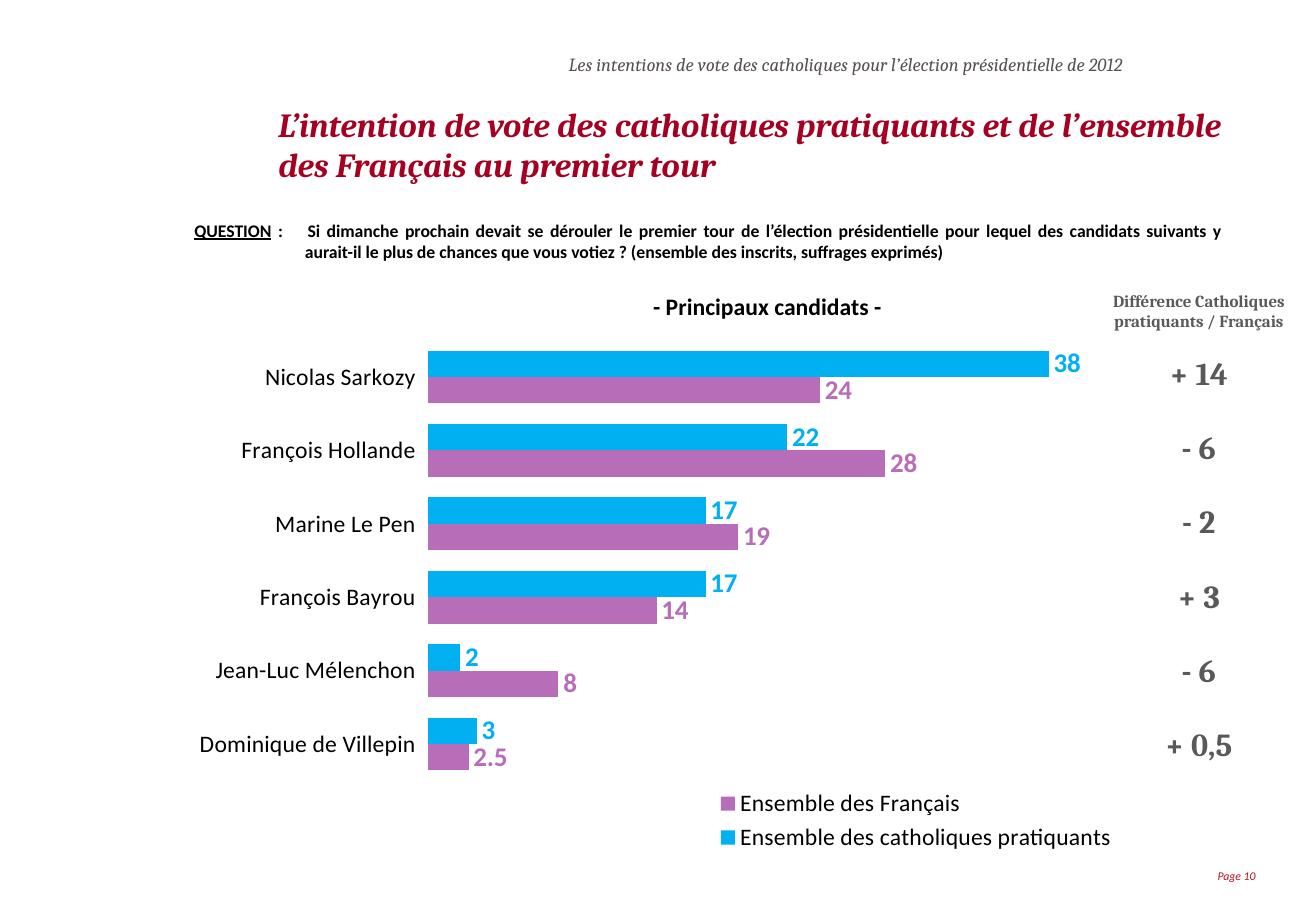
from lxml import etree
from pptx import Presentation
from pptx import util as u
from pptx.chart.data import CategoryChartData
from pptx.dml.color import RGBColor
from pptx.enum import chart as ch
from pptx.enum import text as t
from pptx.oxml.ns import qn

COLORS = {
    "title": "A50021", "page": "B5121B", "header": "585056", "gap": "595959",
    "text": "000000", "white": "FFFFFF", "catholics": "00B0F0", "french": "B86DB8",
}
CANDIDATES = ["Nicolas Sarkozy", "François Hollande", "Marine Le Pen",
              "François Bayrou", "Jean-Luc Mélenchon", "Dominique de Villepin"]
SERIES = [
    ("Ensemble des catholiques pratiquants", (38, 22, 17, 17, 2, 3), "catholics"),
    ("Ensemble des Français", (24, 28, 19, 14, 8, 2.5), "french"),
]
GAPS = ["+ 14", "- 6", "- 2", "+ 3", "- 6", "+ 0,5"]


def inches(box):
    return [u.Inches(value) for value in box]


def set_font(font, size, color, name="Calibri", bold=False, italic=False):
    font.size, font.name = u.Pt(size), name
    font.bold, font.italic = bold, italic
    font.color.rgb = RGBColor.from_string(COLORS[color])


def add_text(page, box, text, size, color, name="Calibri", bold=False, italic=False,
             insets=(0, 0, 0, 0), anchor=t.MSO_ANCHOR.MIDDLE, align=t.PP_ALIGN.LEFT):
    frame = page.shapes.add_textbox(*inches(box)).text_frame
    frame.word_wrap = True
    frame.vertical_anchor = anchor
    (frame.margin_left, frame.margin_top,
     frame.margin_right, frame.margin_bottom) = inches(insets)
    para = frame.paragraphs[0]
    para.text = text
    para.alignment = align
    set_font(para.font, size, color, name, bold, italic)
    return para


def add_question(page, box):
    para = add_text(page, box, "", 10.5, "text", bold=True,
                    insets=(0.09, 0.18, 0.36, 0.18),
                    anchor=t.MSO_ANCHOR.TOP, align=t.PP_ALIGN.JUSTIFY)
    # Hanging indent
    indent = u.Inches(0.91)
    props = para._p.get_or_add_pPr()
    props.set("marL", str(indent))
    props.set("indent", str(-indent))
    label = para.add_run()
    label.text = "QUESTION"
    label.font.underline = True
    para.add_run().text = (
        " :\tSi dimanche prochain devait se dérouler le premier tour de l’élection "
        "présidentielle pour lequel des candidats suivants y aurait-il le plus de chances "
        "que vous votiez ? (ensemble des inscrits, suffrages exprimés)")


def add_gap_table(page, box):
    rows = ["Différence Catholiques pratiquants / Français"] + GAPS
    frame = page.shapes.add_table(len(rows), 1, *inches(box))
    table = frame.table
    table.first_row = table.horz_banding = False
    for index, text in enumerate(rows):
        table.rows[index].height = u.Inches(0.61 if index else 0.42)
        cell = table.cell(index, 0)
        cell.fill.solid()
        cell.fill.fore_color.rgb = RGBColor.from_string(COLORS["white"])
        cell.vertical_anchor = t.MSO_ANCHOR.MIDDLE
        cell.text = text
        para = cell.text_frame.paragraphs[0]
        para.alignment = t.PP_ALIGN.CENTER
        set_font(para.font, 19 if index else 10, "gap", "Cambria", bold=True)


def place(parent, index, box, inner=False):
    """Give a chart part a manual layout, as fractions of the chart."""
    for old in parent.findall(qn("c:layout")):
        parent.remove(old)
    layout = etree.Element(qn("c:layout"))
    manual = etree.SubElement(layout, qn("c:manualLayout"))
    settings = [("layoutTarget", "inner")] if inner else []
    settings += [("xMode", "edge"), ("yMode", "edge")]
    settings += zip("xywh", map(str, box))
    for tag, value in settings:
        etree.SubElement(manual, qn("c:" + tag)).set("val", value)
    parent.insert(index, layout)


def add_vote_chart(page, box):
    data = CategoryChartData()
    data.categories = CANDIDATES
    for name, values, _ in SERIES:
        data.add_series(name, values)
    chart = page.shapes.add_chart(
        ch.XL_CHART_TYPE.BAR_CLUSTERED, *inches(box), data).chart
    chart.has_title = False
    set_font(chart.font, 14, "text")

    # Axes
    names, votes = chart.category_axis, chart.value_axis
    names.reverse_order = True
    names.format.line.fill.background()
    votes.minimum_scale, votes.maximum_scale = 0, 50
    votes.has_major_gridlines = False
    votes.visible = False

    # Bars and values
    plot = chart.plots[0]
    plot.gap_width, plot.overlap = 78, 0
    plot.vary_by_categories = False
    for series, (_, _, color) in zip(plot.series, SERIES):
        series.format.fill.solid()
        series.format.fill.fore_color.rgb = RGBColor.from_string(COLORS[color])
        labels = series.data_labels
        labels.show_value = True
        labels.position = ch.XL_LABEL_POSITION.OUTSIDE_END
        set_font(labels.font, 16, color, bold=True)

    # Legend and plot positions
    chart.has_legend = True
    chart.legend.position = ch.XL_LEGEND_POSITION.RIGHT
    chart.legend.include_in_layout = False
    place(chart.legend._element, 1, (0.48, 0.86, 0.4, 0.16))
    plot_area = chart._chartSpace.find(".//" + qn("c:plotArea"))
    place(plot_area, 0, (0.229, 0, 0.755, 0.853), inner=True)


def build_page(deck):
    page = deck.slides.add_slide(deck.slide_layouts[6])
    # Heading
    add_text(page, (4.68, 0.41, 5.55, 0.24),
             "Les intentions de vote des catholiques pour l’élection présidentielle de 2012",
             11, "header", "Cambria", italic=True)
    add_text(page, (2.29, 0.75, 8.09, 0.87),
             "L’intention de vote des catholiques pratiquants et de l’ensemble "
             "des Français au premier tour",
             20, "title", "Cambria", bold=True, italic=True)
    add_question(page, (1.51, 1.63, 8.91, 0.72))
    # Results
    add_gap_table(page, (9.04, 2.35, 1.65, 4.1))
    add_vote_chart(page, (1.48, 2.8, 8.91, 4.25))
    add_text(page, (2.97, 2.35, 6.69, 0.34), "- Principaux candidats -", 14, "text",
             bold=True, insets=(0.1, 0.05, 0.1, 0.05),
             anchor=t.MSO_ANCHOR.TOP, align=t.PP_ALIGN.CENTER)
    # Page number
    add_text(page, (10.02, 7.11, 0.67, 0.19), "Page 10", 7, "page", italic=True)


def main():
    deck = Presentation()
    deck.slide_width, deck.slide_height = inches((10.83, 7.48))
    build_page(deck)
    deck.save("out.pptx")


if __name__ == "__main__":
    main()
